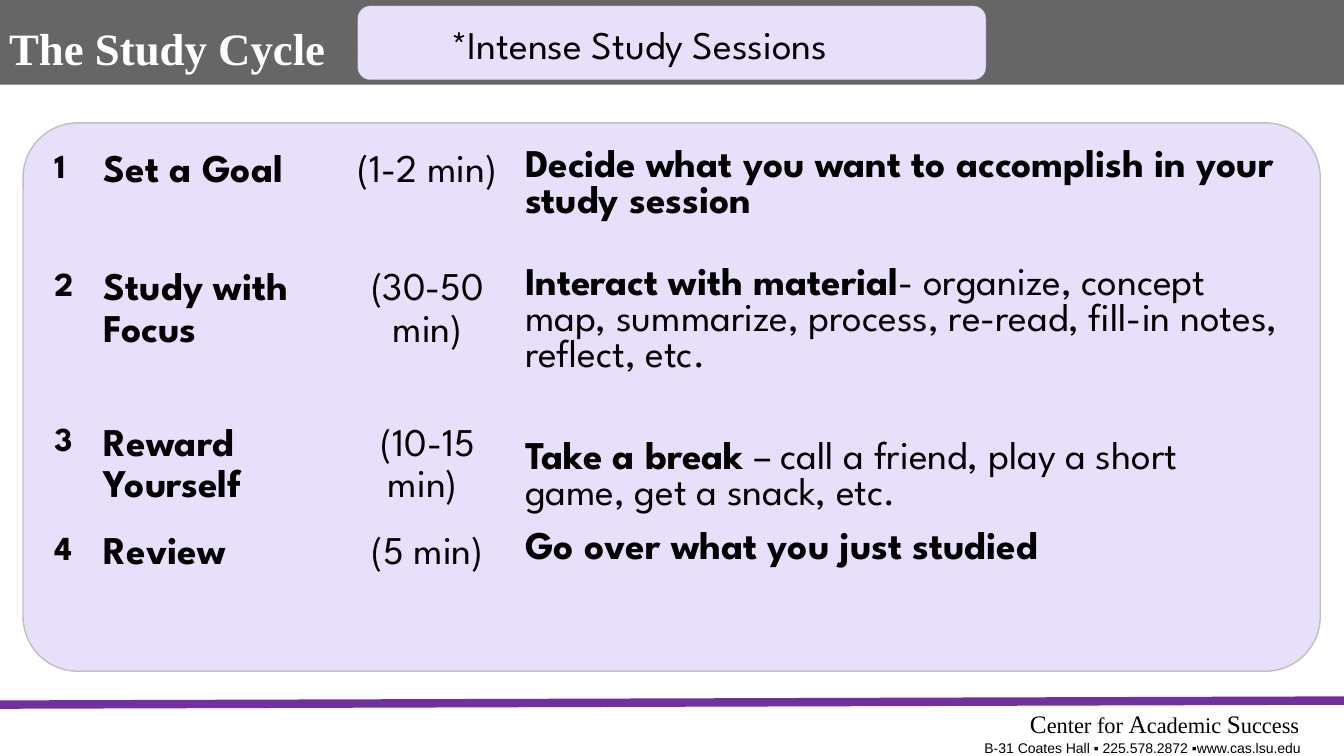
import pptx
import pptx.util
import pptx.dml.color
import pptx.enum.dml
import pptx.enum.shapes
import pptx.enum.text
import pptx.oxml.ns
import lxml.etree

Pt = pptx.util.Pt
ALIGN = pptx.enum.text.PP_ALIGN
ANCHOR = pptx.enum.text.MSO_ANCHOR
HUES = {"panel": "E8E0FB", "edge": "BFBFBF", "bar": "666666",
        "rule": "7030A0", "ink": "000000", "white": "FFFFFF"}
SPARTAN, TIMES, ARIAL = "League Spartan", "Times New Roman", "Arial"
PLAIN_GRID = "{2D5ABB26-0587-4C30-8999-92F81FD0307C}"


class Deck:
    def __init__(self):
        self.file = pptx.Presentation()
        self.file.slide_width = Pt(960)
        self.file.slide_height = Pt(540)
        self.slide = self.file.slides.add_slide(self.file.slide_layouts[5])

    def hue(self, name):
        return pptx.dml.color.RGBColor.from_string(HUES[name])

    def add_runs(self, frame, runs, font, ink="ink", align=ALIGN.LEFT, space=1.0):
        para = frame.paragraphs[0]
        para.alignment = align
        para.line_spacing = space
        for text, size, bold in runs:
            run = para.add_run()
            run.text = text
            run.font.name = font
            run.font.size = Pt(size)
            run.font.bold = bold
            run.font.color.rgb = self.hue(ink)

    def inset(self, item, sides):
        left, top, right, bottom = map(Pt, sides)
        item.margin_left = left
        item.margin_top = top
        item.margin_right = right
        item.margin_bottom = bottom

    def title(self, box, text):
        shape = self.slide.shapes.title
        shape.left, shape.top, shape.width, shape.height = map(Pt, box)
        shape.fill.solid()
        shape.fill.fore_color.rgb = self.hue("bar")
        frame = shape.text_frame
        frame.auto_size = pptx.enum.text.MSO_AUTO_SIZE.NONE
        frame.vertical_anchor = ANCHOR.MIDDLE
        self.inset(frame, (7.2, 14.4, 36, 7.2))
        self.add_runs(frame, [(text, 32, True)], TIMES, "white")

    def panel(self, box, curve, weight, dash=None):
        kind = pptx.enum.shapes.MSO_SHAPE.ROUNDED_RECTANGLE
        shape = self.slide.shapes.add_shape(kind, *map(Pt, box))
        shape.shadow.inherit = False
        shape.adjustments[0] = curve
        shape.fill.solid()
        shape.fill.fore_color.rgb = self.hue("panel")
        shape.line.color.rgb = self.hue("edge")
        shape.line.width = Pt(weight)
        if dash:
            shape.line.dash_style = dash

    def label(self, box, runs, font, align=ALIGN.LEFT, anchor=ANCHOR.TOP,
              sides=(7.2, 3.6, 7.2, 3.6)):
        frame = self.slide.shapes.add_textbox(*map(Pt, box)).text_frame
        frame.word_wrap = True
        frame.vertical_anchor = anchor
        self.inset(frame, sides)
        self.add_runs(frame, runs, font, align=align)

    def rule(self, ends, weight):
        kind = pptx.enum.shapes.MSO_CONNECTOR.STRAIGHT
        line = self.slide.shapes.add_connector(kind, *map(Pt, ends))
        line.line.color.rgb = self.hue("rule")
        line.line.width = Pt(weight)
        props = line.element.spPr
        lxml.etree.SubElement(props, pptx.oxml.ns.qn("a:effectLst"))

    def table(self, left, top, wides, highs, steps):
        table = self.slide.shapes.add_table(
            len(highs), len(wides), Pt(left), Pt(top),
            Pt(sum(wides)), Pt(sum(highs))).table
        table.first_row = table.horz_banding = False
        props = table._tbl.tblPr
        props.find(pptx.oxml.ns.qn("a:tableStyleId")).text = PLAIN_GRID
        for col, wide in zip(table.columns, wides):
            col.width = Pt(wide)
        for row, high in zip(table.rows, highs):
            row.height = Pt(high)
        for r, (name, time, lead, rest, anchor) in enumerate(steps):
            detail = [(lead, 28, True)]
            if rest:
                detail.append((rest, 28, False))
            cells = (
                ([(str(r + 1), 24, True)], ALIGN.LEFT, 1.15, ANCHOR.TOP),
                ([(name, 28, True)], ALIGN.LEFT, 1.15, ANCHOR.TOP),
                ([(time, 28, False)], ALIGN.CENTER, 1.15, ANCHOR.TOP),
                (detail, ALIGN.LEFT, 1.0, anchor),
            )
            for c, (runs, align, space, place) in enumerate(cells):
                cell = table.cell(r, c)
                cell.fill.background()
                cell.vertical_anchor = place
                self.inset(cell, (4.5, 0, 4.5, 0))
                self.add_runs(cell.text_frame, runs, SPARTAN,
                              align=align, space=space)


def main():
    deck = Deck()
    deck.panel((16.5, 87.8, 926.6, 391.7), 0.1, 1)
    deck.title((-0.7, 0, 961.2, 60.5), "The Study Cycle")
    steps = (
        ("Set a Goal", "(1-2 min)",
         "Decide what you want to accomplish in your study session", "",
         ANCHOR.TOP),
        ("Study with Focus", "(30-50 min)", "Interact with material",
         "- organize, concept map, summarize, process, re-read, "
         "fill-in notes, reflect, etc.", ANCHOR.TOP),
        ("Reward Yourself", "(10-15 min) ", "Take a break ",
         "– call a friend, play a short game, get a snack, etc.",
         ANCHOR.MIDDLE),
        ("Review", "(5 min)", "Go over what you just studied", "",
         ANCHOR.TOP),
    )
    deck.table(34.4, 107.3, (35.3, 170.6, 130.3, 552.2),
               (84.2, 110.9, 77.8, 79.2), steps)
    deck.panel((255.6, 4.3, 448.6, 52.6), 0.17, 0.25,
               pptx.enum.dml.MSO_LINE.ROUND_DOT)
    deck.label((315.4, 10.8, 324.7, 41),
               [("*Intense Study Sessions", 28, False)], SPARTAN,
               anchor=ANCHOR.BOTTOM)
    deck.rule((-0.7, 503.3, 960, 500.4), 6)
    office = (("C", 18), ("enter for ", 16), ("A", 18),
              ("cademic ", 16), ("S", 18), ("uccess", 16))
    deck.label((703.4, 503.3, 227.5, 18.7),
               [(text, size, False) for text, size in office], TIMES,
               ALIGN.RIGHT, sides=(2.9,) * 4)
    deck.label((646.6, 524.9, 289.4, 15.1),
               [("B-31 Coates Hall ▪ 225.578.2872 ▪www.cas.lsu.edu", 10, False)],
               ARIAL, ALIGN.RIGHT)
    deck.file.save("out.pptx")


if __name__ == "__main__":
    main()
